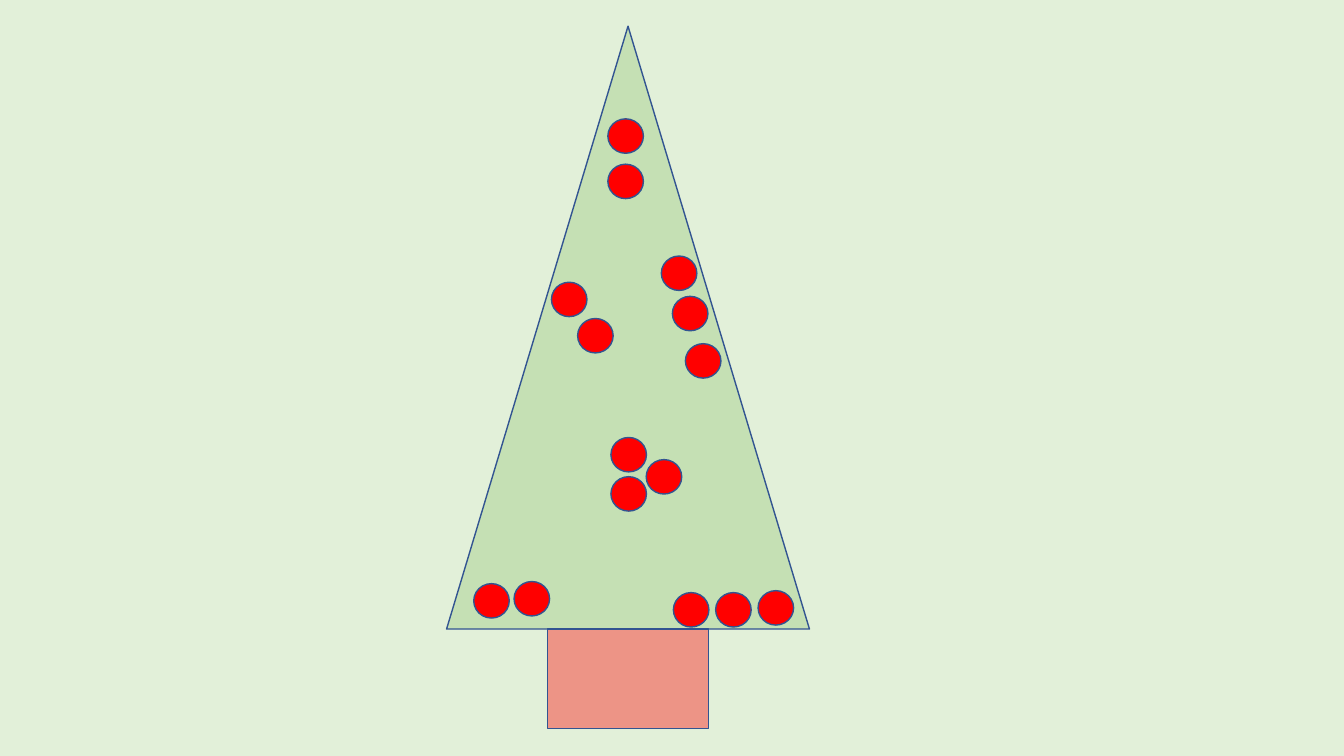
import pptx
import pptx.util
import pptx.dml.color
import pptx.enum.shapes
from dataclasses import dataclass
from lxml import etree

Pt = pptx.util.Pt
Kind = pptx.enum.shapes.MSO_SHAPE


@dataclass(frozen=True)
class Theme:
    back: str = "E2F0D9"
    leaf: str = "C5E0B4"
    red: str = "FF0000"
    edge: str = "325491"
    line: float = 1


theme = Theme()

BALLS = [
    (19.4, 398.2), (142.6, 309.6), (117.4, 293.8), (117.4, 321.8),
    (115.2, 98.6), (115.2, 66.2), (222.5, 403.2), (93.6, 208.8),
    (74.9, 182.9), (192.2, 404.6), (162, 404.6), (153.4, 164.2),
    (170.6, 226.8), (161.3, 193), (48.2, 396.7),
]


def paint(fill, color):
    fill.solid()
    fill.fore_color.rgb = pptx.dml.color.RGBColor.from_string(color)


def draw(slide, kind, box, color):
    shape = slide.shapes.add_shape(kind, *map(Pt, box))
    shape.shadow.inherit = False
    paint(shape.fill, color)
    paint(shape.line.fill, theme.edge)
    shape.line.width = Pt(theme.line)
    return shape


def fade(shape, percent):
    color = shape.fill._xPr.find(".//" + pptx.oxml.ns.qn("a:srgbClr"))
    alpha = etree.SubElement(color, pptx.oxml.ns.qn("a:alpha"))
    alpha.set("val", str(percent * 1000))


def add_tree(slide, box):
    left, top, width, height = box
    draw(slide, Kind.ISOSCELES_TRIANGLE, box, theme.leaf)
    wide = 115.2
    trunk = (left + (width - wide) / 2, top + height, wide, 71.3)
    fade(draw(slide, Kind.RECTANGLE, trunk, theme.red), 38)


def add_balls(slide, box):
    left, top = box[:2]
    for x, y in BALLS:
        draw(slide, Kind.OVAL, (left + x, top + y, 25.4, 24.6), theme.red)


def main():
    deck = pptx.Presentation()
    deck.slide_width, deck.slide_height = Pt(960), Pt(540)
    slide = deck.slides.add_slide(deck.slide_layouts[6])
    paint(slide.background.fill, theme.back)
    box = (319, 18.7, 259.2, 430.6)
    add_tree(slide, box)
    add_balls(slide, box)
    deck.save("out.pptx")


if __name__ == "__main__":
    main()
